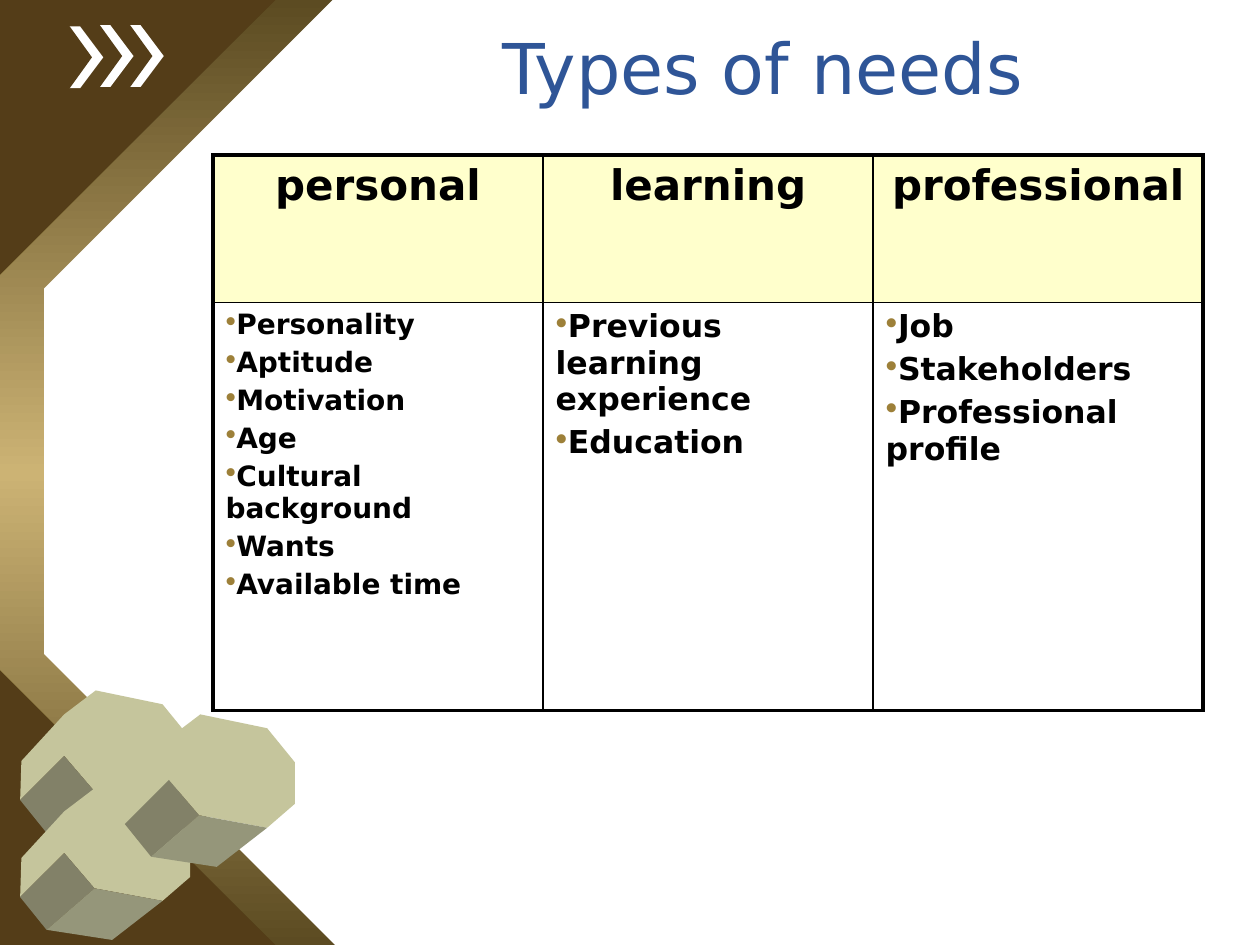
from copy import deepcopy

from lxml.etree import SubElement
from pptx import Presentation
from pptx.dml.color import RGBColor
from pptx.enum.shapes import MSO_SHAPE
from pptx.enum.text import MSO_ANCHOR, PP_ALIGN
from pptx.oxml.ns import qn
from pptx.util import Inches, Pt

FONT = "DejaVu Sans"
COLORS = {
    "brown": "543D18", "olive": "5C4B22", "gold": "CCB374", "white": "FFFFFF",
    "cream": "FFFFCC", "title": "2F5597", "black": "000000", "bullet": "9D8039",
    "gem_face": "C5C59C", "gem_dark": "828168", "gem_mid": "95967A",
}
# heading, body size, items
NEEDS = [
    ("personal", 16, ["Personality", "Aptitude", "Motivation", "Age",
                      "Cultural background", "Wants", "Available time"]),
    ("learning", 18, ["Previous\vlearning experience", "Education"]),
    ("professional", 18, ["Job", "Stakeholders", "Professional profile"]),
]
# Gem facets, in inches from the gem's top left corner
GEM_FACETS = [
    ("gem_face", [(0.6, 0), (1.13, 0.11), (1.35, 0.38), (1.35, 0.71), (1.13, 0.9),
                  (0.59, 0.8), (0.35, 0.52), (0, 0.87), (0.01, 0.56), (0.35, 0.19)]),
    ("gem_dark", [(0.35, 0.52), (0.59, 0.8), (0.21, 1.13), (0, 0.87)]),
    ("gem_mid", [(0.59, 0.8), (1.13, 0.9), (0.73, 1.21), (0.21, 1.13)]),
]


def rgb(name):
    return RGBColor.from_string(COLORS[name])


def paint(sp, color):
    sp.shadow.inherit = False
    sp.line.fill.background()
    sp.fill.solid()
    sp.fill.fore_color.rgb = rgb(color)


def add_preset(s, kind, box, color, adj=None):
    sp = s.shapes.add_shape(kind, *map(Inches, box))
    if adj is not None:
        sp.adjustments[0] = adj
    paint(sp, color)
    return sp


def fill_band(sp):
    """Vertical gradient, olive at both ends and gold in the middle."""
    sp.fill.gradient()
    sp.fill.gradient_angle = 90
    last = sp.fill._xPr.find(qn("a:gradFill")).find(qn("a:gsLst"))[-1]
    last.addnext(deepcopy(last))
    stops = zip(sp.fill.gradient_stops, (0, 0.5, 1), ("olive", "gold", "olive"))
    for stop, position, color in stops:
        stop.position = position
        stop.color.rgb = rgb(color)


def add_frame(s):
    band = add_preset(s, MSO_SHAPE.OCTAGON, (-0.01, 0, 7.5, 7.5), "olive", 0.293)
    fill_band(band)
    add_preset(s, MSO_SHAPE.RECTANGLE, (4.33, -0.01, 5.67, 7.51), "white")
    add_preset(s, MSO_SHAPE.OCTAGON, (0.35, -0.02, 7.5, 7.52), "white", 0.308)


def add_chevrons(s):
    for x, y in ((0.56, 0.2), (0.32, 0.2), (0.08, 0.21)):
        add_preset(s, MSO_SHAPE.CHEVRON, (x, y, 0.74, 0.49), "white", 0.375)
        add_preset(s, MSO_SHAPE.CHEVRON, (x - 0.09, y - 0.01, 0.74, 0.51), "brown", 0.36)


def add_gem(s, left, top):
    for color, points in GEM_FACETS:
        corners = [(Inches(left + x), Inches(top + y)) for x, y in points]
        builder = s.shapes.build_freeform(*corners[0])
        builder.add_line_segments(corners[1:])
        paint(builder.convert_to_shape(), color)


def format_paragraph(p, size, color, bold=False, align=PP_ALIGN.LEFT):
    p.alignment = align
    for r in p.runs:
        r.font.name = FONT
        r.font.size = Pt(size)
        r.font.bold = bold
        r.font.color.rgb = rgb(color)


def set_title(s, text):
    title = s.shapes.title
    title.left, title.top, title.width, title.height = map(Inches, (2.28, 0.19, 7.55, 0.67))
    tf = title.text_frame
    tf.text = text
    tf.vertical_anchor = MSO_ANCHOR.MIDDLE
    format_paragraph(tf.paragraphs[0], 40, "title", align=PP_ALIGN.CENTER)
    s.shapes._spTree.append(title._element)  # in front of the frame


def add_bullet(p):
    pPr = p._p.get_or_add_pPr()
    color = SubElement(pPr, qn("a:buClr"))
    SubElement(color, qn("a:srgbClr"), val=COLORS["bullet"])
    SubElement(pPr, qn("a:buSzPct"), val="110000")
    SubElement(pPr, qn("a:buChar"), char="•")


def set_borders(cell, outer_sides):
    tcPr = cell._tc.get_or_add_tcPr()
    for side in "LRTB":
        width = Pt(2.25 if side in outer_sides else 1)
        ln = SubElement(tcPr, qn(f"a:ln{side}"), w=str(width))
        fill = SubElement(ln, qn("a:solidFill"))
        SubElement(fill, qn("a:srgbClr"), val=COLORS["black"])


def fill_cell(cell, lines, size, align, bulleted):
    tf = cell.text_frame
    for i, line in enumerate(lines):
        p = tf.paragraphs[0] if i == 0 else tf.add_paragraph()
        p.text = line
        format_paragraph(p, size, "black", True, align)
        p.space_before = Pt(0.2 * size)
        if bulleted:
            add_bullet(p)


def add_needs_table(s):
    box = map(Inches, (1.69, 1.23, 7.86, 4.41))
    table = s.shapes.add_table(2, len(NEEDS), *box).table
    table.first_row = table.horz_banding = False
    table.rows[0].height, table.rows[1].height = Inches(1.17), Inches(3.24)
    for col, (heading, size, items) in enumerate(NEEDS):
        table.columns[col].width = Inches(2.62)
        sides = ("L" if col == 0 else "") + ("R" if col == len(NEEDS) - 1 else "")
        head, body = table.cell(0, col), table.cell(1, col)
        set_borders(head, sides + "T")
        set_borders(body, sides + "B")
        head.fill.solid()
        head.fill.fore_color.rgb = rgb("cream")
        body.fill.background()
        fill_cell(head, [heading], 24, PP_ALIGN.CENTER, False)
        fill_cell(body, items, size, PP_ALIGN.LEFT, True)


def main():
    prs = Presentation()
    prs.slide_width, prs.slide_height = Inches(10), Inches(7.5)
    s = prs.slides.add_slide(prs.slide_layouts[5])
    s.background.fill.solid()
    s.background.fill.fore_color.rgb = rgb("brown")
    add_frame(s)
    add_chevrons(s)
    for left, top in ((0.16, 5.48), (0.16, 6.25), (0.99, 5.67)):
        add_gem(s, left, top)
    set_title(s, "Types of needs")
    add_needs_table(s)
    prs.save("out.pptx")


if __name__ == "__main__":
    main()
